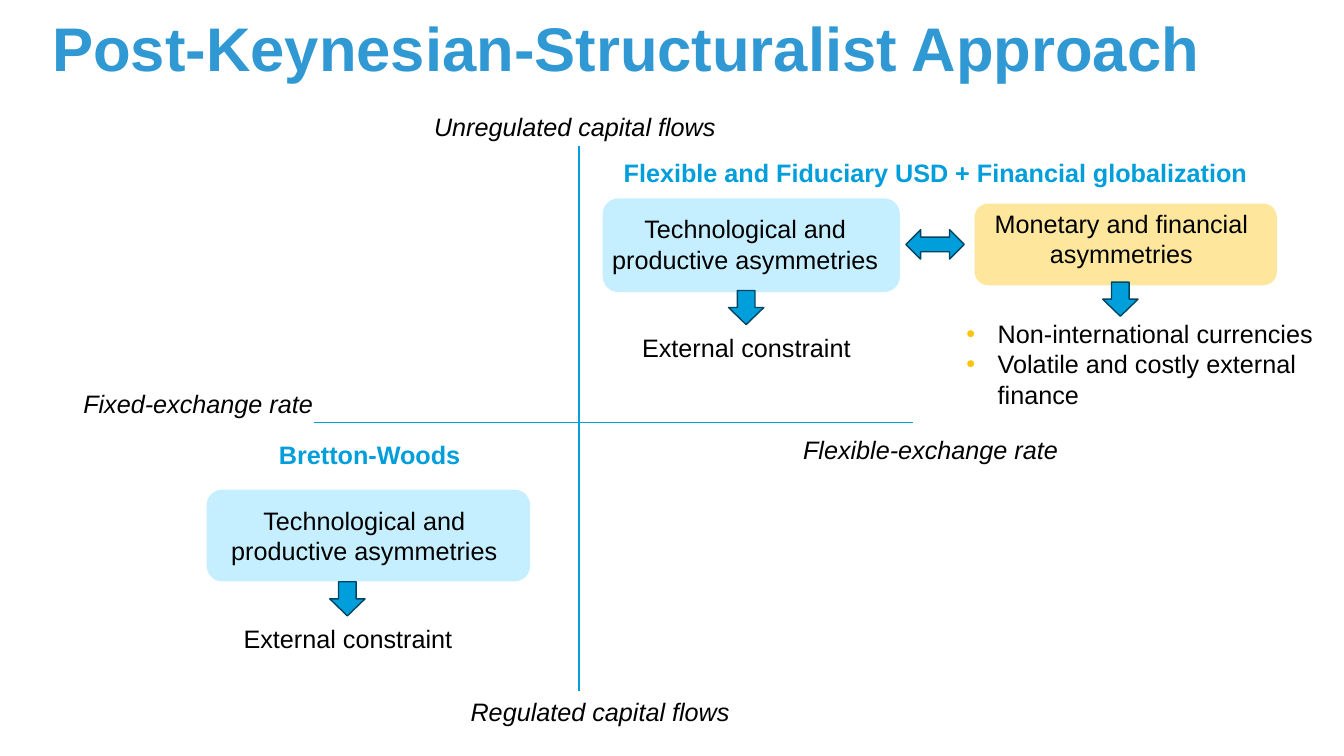
from dataclasses import dataclass

from lxml.etree import SubElement
from pptx import Presentation
from pptx.dml.color import RGBColor
from pptx.enum.shapes import MSO_CONNECTOR, MSO_SHAPE as SHAPE
from pptx.enum.text import MSO_ANCHOR as ANCHOR, MSO_AUTO_SIZE as FIT, PP_ALIGN as ALIGN
from pptx.oxml.ns import qn
from pptx.util import Cm, Pt


@dataclass(frozen=True)
class Theme:
    font: str = "Arial"
    title_size: int = 44
    text_size: int = 18
    title: str = "3098D2"
    text: str = "000000"
    accent: str = "009EDB"
    outline: str = "004560"
    productive: str = "C5EFFF"
    monetary: str = "FEE79D"
    bullet: str = "FCC30B"


def rgb(value):
    return RGBColor.from_string(value)


def write(p, text, font, size, color, bold=False, italic=False, align=ALIGN.LEFT, spacing=1.0):
    p.alignment = align
    p.line_spacing = spacing
    p.space_before = p.space_after = Pt(0)
    r = p.add_run()
    r.text = text
    r.font.name, r.font.size = font, Pt(size)
    r.font.bold, r.font.italic = bold, italic
    r.font.color.rgb = rgb(color)


class Deck:
    def __init__(self, theme):
        self.theme = theme
        self.prs = Presentation()
        self.prs.slide_width, self.prs.slide_height = Cm(33.87), Cm(19.05)
        self.slide = self.prs.slides.add_slide(self.prs.slide_layouts[1])
        self.shapes = self.slide.shapes

    def place(self, sp, left, top, width, height, anchor):
        sp.left, sp.top, sp.width, sp.height = Cm(left), Cm(top), Cm(width), Cm(height)
        tf = sp.text_frame
        tf.word_wrap, tf.auto_size, tf.vertical_anchor = True, FIT.NONE, anchor
        return tf

    def title(self, text, *box):
        t = self.theme
        tf = self.place(self.shapes.title, *box, ANCHOR.MIDDLE)
        tf.margin_left = tf.margin_right = tf.margin_top = tf.margin_bottom = Cm(0.25)
        write(tf.paragraphs[0], text, t.font, t.title_size, t.title, bold=True, spacing=0.9)

    def bullets(self, items, *box):
        t = self.theme
        tf = self.place(self.slide.placeholders[1], *box, ANCHOR.TOP)
        for i, item in enumerate(items):
            p = tf.add_paragraph() if i else tf.paragraphs[0]
            pPr = p._p.get_or_add_pPr()
            pPr.set("marL", str(Cm(0.79)))
            pPr.set("indent", str(-Cm(0.79)))
            color = SubElement(pPr, qn("a:buClr"))
            SubElement(color, qn("a:srgbClr"), val=t.bullet)
            SubElement(pPr, qn("a:buFont"), typeface=t.font)
            SubElement(pPr, qn("a:buChar"), char="•")
            write(p, item, t.font, t.text_size, t.text)

    def label(self, text, left, top, width, height=1.02, color=None, **fmt):
        t = self.theme
        sp = self.shapes.add_textbox(0, 0, 0, 0)
        tf = self.place(sp, left, top, width, height, ANCHOR.TOP)
        write(tf.paragraphs[0], text, t.font, t.text_size, color or t.text, **fmt)
        return sp

    def shape(self, kind, left, top, width, height, fill, line=None):
        sp = self.shapes.add_shape(kind, Cm(left), Cm(top), Cm(width), Cm(height))
        sp.shadow.inherit = False
        sp.fill.solid()
        sp.fill.fore_color.rgb = rgb(fill)
        if line:
            sp.line.color.rgb, sp.line.width = rgb(line), Pt(1)
        else:
            sp.line.fill.background()
        return sp

    def arrow(self, kind, left, top, width=0.89, height=0.86):
        return self.shape(kind, left, top, width, height, self.theme.accent, self.theme.outline)

    def axis(self, x1, y1, x2, y2):
        line = self.shapes.add_connector(MSO_CONNECTOR.STRAIGHT, Cm(x1), Cm(y1), Cm(x2), Cm(y2))
        line.line.color.rgb, line.line.width = rgb(self.theme.accent), Pt(1)
        SubElement(line._element.spPr, qn("a:effectLst"))
        return line


def main():
    theme = Theme()
    deck = Deck(theme)
    deck.title("Post-Keynesian-Structuralist Approach", 1.07, 0.05, 31.55, 2.51)

    unregulated = deck.label("Unregulated capital flows", 10.69, 2.67, 7.8, italic=True)
    for text, *box in (
        ("Regulated capital flows", 11.61, 17.42, 7.8),
        ("Flexible-exchange rate", 19.99, 10.82, 7.19),
        ("Fixed-exchange rate", 1.85, 9.65, 7.16),
    ):
        deck.label(text, *box, italic=True)
    deck.axis(14.59, 3.69, 14.59, 17.42).begin_connect(unregulated, 2)
    deck.axis(7.92, 10.64, 23.01, 10.64)

    for text, *box in (
        ("Bretton-Woods", 6.78, 10.95, 5.49),
        ("Flexible and Fiduciary USD + Financial globalization", 15.47, 3.84, 16.79),
    ):
        deck.label(text, *box, color=theme.accent, bold=True)

    productive = "Technological and productive asymmetries"
    monetary = "Monetary and financial asymmetries"
    for text, fill, card, caption, arrow in (
        (productive, theme.productive, (5.21, 12.34, 8.15, 2.31), (5.28, 12.6), (8.31, 14.66)),
        (productive, theme.productive, (15.19, 5, 7.49, 2.36), (14.88, 5.26), (18.36, 7.32)),
        (monetary, theme.monetary, (24.56, 5.13, 7.62, 2.06), (24.36, 5.13), (27.79, 7.11)),
    ):
        deck.shape(SHAPE.ROUNDED_RECTANGLE, *card, fill)
        deck.label(text, *caption, 7.8, 1.8, align=ALIGN.CENTER)
        deck.arrow(SHAPE.DOWN_ARROW, *arrow)
    deck.arrow(SHAPE.LEFT_RIGHT_ARROW, 22.83, 5.79, 1.47, 0.74)

    for left, top in ((5.89, 15.57), (15.93, 8.26)):
        deck.label("External constraint", left, top, 6.12)
    deck.bullets(
        ("Non-international currencies", "Volatile and costly external finance"),
        24.1, 7.9, 9.42, 2.57,
    )
    deck.prs.save("out.pptx")


if __name__ == "__main__":
    main()
